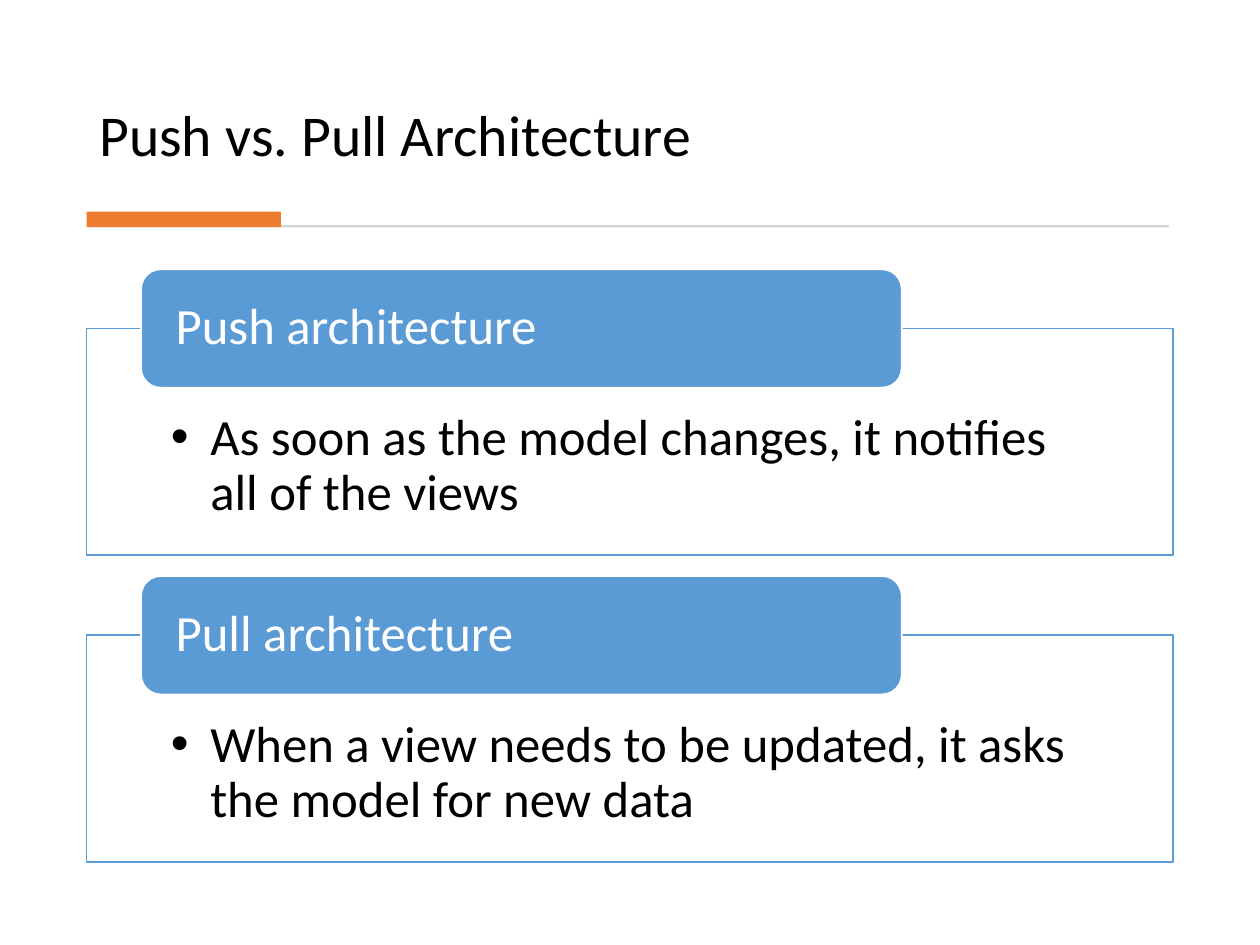
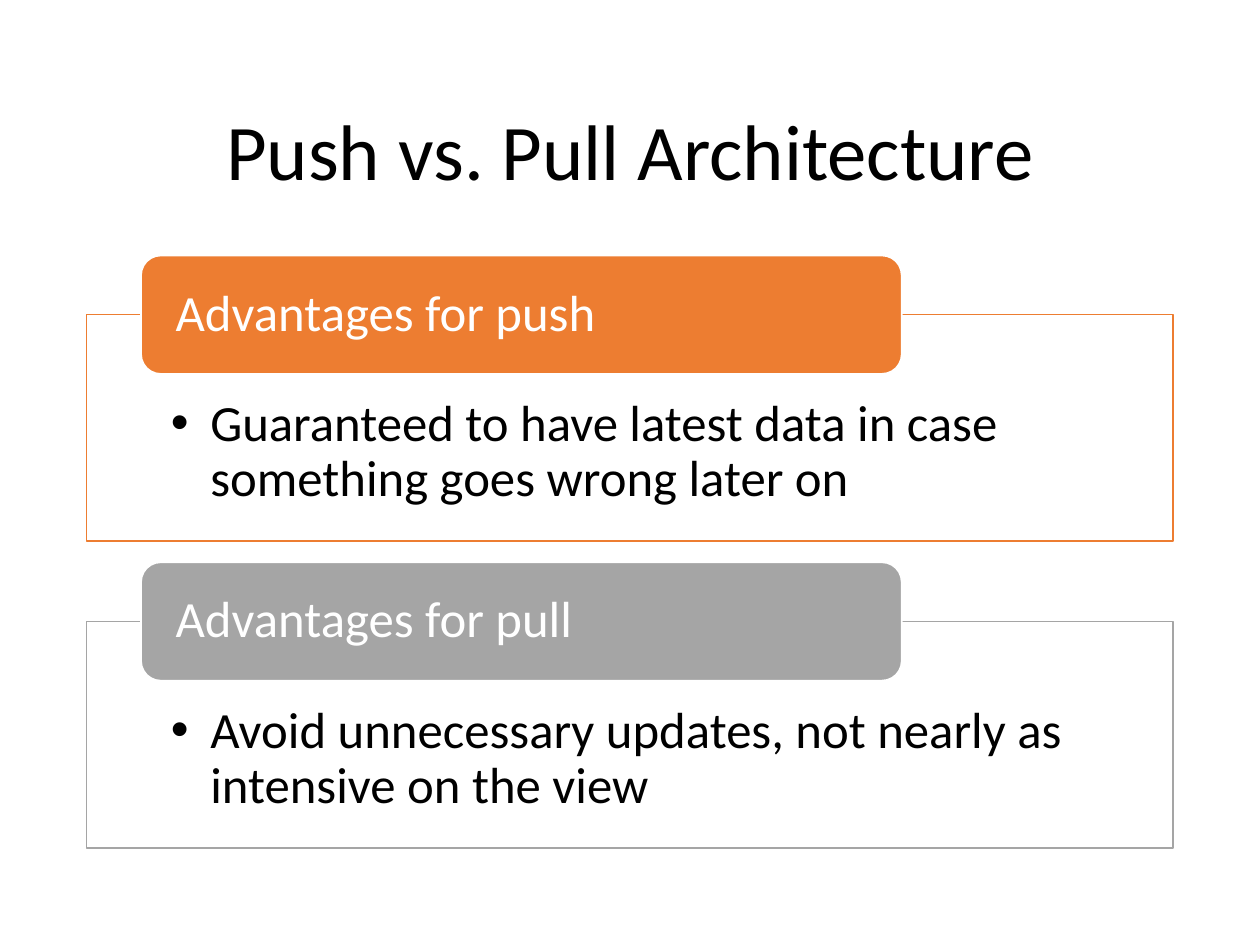
from dataclasses import dataclass
from typing import Optional

from lxml.etree import SubElement
from pptx import Presentation
from pptx.dml.color import RGBColor
from pptx.enum.shapes import MSO_SHAPE as Preset
from pptx.enum.text import MSO_ANCHOR as Anchor, MSO_AUTO_SIZE as AutoSize, PP_ALIGN as Align
from pptx.oxml.ns import qn
from pptx.util import Pt

# Shared style
FONT = "Calibri"
BLACK = RGBColor(0x00, 0x00, 0x00)
WHITE = RGBColor(0xFF, 0xFF, 0xFF)
BLUE = RGBColor(0x5B, 0x9B, 0xD5)
ORANGE = RGBColor(0xED, 0x7D, 0x31)
GRAY = RGBColor(0xA5, 0xA5, 0xA5)
RULE_GRAY = RGBColor(0xD5, 0xD5, 0xD5)

# Shared layout, in points
TITLE_ONLY = 5
LEFT, WIDTH = 49.5, 621
PANEL_HEIGHT, PANEL_STEP = 129.6, 175.3
TAB_LEFT, TAB_WIDTH, TAB_HEIGHT = 80.6, 434.7, 67.7
TAB_RISE = 33.8
TEXT_SIZE = 29
BULLET_INDENT = 22.5


@dataclass(frozen=True)
class Box:
    left: float
    top: float
    width: float
    height: float

    def lengths(self) -> tuple:
        return Pt(self.left), Pt(self.top), Pt(self.width), Pt(self.height)


@dataclass(frozen=True)
class TitleStyle:
    box: Box
    size: float
    anchor: Anchor
    align: Align


@dataclass(frozen=True)
class Panel:
    heading: str
    detail: str
    color: RGBColor


@dataclass(frozen=True)
class SlideContent:
    title_style: TitleStyle
    has_rule: bool
    panels_top: float
    panels: tuple[Panel, ...]


TITLE = "Push vs. Pull Architecture"
SLIDES = (
    SlideContent(
        TitleStyle(Box(LEFT, 20.2, WIDTH, 79.9), 33, Anchor.BOTTOM, Align.LEFT),
        True,
        187.7,
        (
            Panel("Push architecture",
                  "As soon as the model changes, it notifies all of the views", BLUE),
            Panel("Pull architecture",
                  "When a view needs to be updated, it asks the model for new data", BLUE),
        ),
    ),
    SlideContent(
        TitleStyle(Box(LEFT, 43.9, WIDTH, 89.3), 45, Anchor.MIDDLE, Align.CENTER),
        False,
        179.8,
        (
            Panel("Advantages for push",
                  "Guaranteed to have latest data in case something goes wrong later on",
                  ORANGE),
            Panel("Advantages for pull",
                  "Avoid unnecessary updates, not nearly as intensive on the view", GRAY),
        ),
    ),
)


def add_block(slide, preset: Preset, box: Box, fill: RGBColor,
              line: Optional[RGBColor] = None):
    shape = slide.shapes.add_shape(preset, *box.lengths())
    shape.shadow.inherit = False
    shape.fill.solid()
    shape.fill.fore_color.rgb = fill
    if line is None:
        shape.line.fill.background()
    else:
        shape.line.color.rgb = line
        shape.line.width = Pt(1)
    return shape


def write_text(shape, text: str, size: float, color: RGBColor,
               anchor: Anchor, align: Align = Align.LEFT):
    frame = shape.text_frame
    frame.word_wrap = True
    frame.auto_size = AutoSize.NONE
    frame.vertical_anchor = anchor
    paragraph = frame.paragraphs[0]
    paragraph.alignment = align
    paragraph.line_spacing = 0.9
    run = paragraph.add_run()
    run.text = text
    run.font.name = FONT
    run.font.size = Pt(size)
    run.font.color.rgb = color
    return paragraph


def set_insets(shape, side: float, top: float, bottom: float) -> None:
    frame = shape.text_frame
    frame.margin_left = frame.margin_right = Pt(side)
    frame.margin_top, frame.margin_bottom = Pt(top), Pt(bottom)


def add_bullet(paragraph) -> None:
    properties = paragraph._p.get_or_add_pPr()
    properties.set("marL", str(Pt(BULLET_INDENT)))
    properties.set("indent", str(-Pt(BULLET_INDENT)))
    SubElement(properties, qn("a:buFont"), typeface="Arial")
    SubElement(properties, qn("a:buChar"), char="•")


def set_opacity(shape, percent: int) -> None:
    color = shape._element.spPr.find(qn("a:solidFill"))[0]
    SubElement(color, qn("a:alpha"), val=str(percent * 1000))


def add_title(slide, style: TitleStyle) -> None:
    title = slide.shapes.title
    title.left, title.top, title.width, title.height = style.box.lengths()
    write_text(title, TITLE, style.size, BLACK, style.anchor, style.align)


def add_title_rule(slide) -> None:
    add_block(slide, Preset.RECTANGLE, Box(51, 128.6, 617, 1.4), RULE_GRAY)
    add_block(slide, Preset.RECTANGLE, Box(LEFT, 121, 111, 8.8), ORANGE)


def add_panel(slide, panel: Panel, top: float) -> None:
    # Outlined box with the bulleted detail
    body = add_block(slide, Preset.RECTANGLE, Box(LEFT, top, WIDTH, PANEL_HEIGHT),
                     WHITE, panel.color)
    set_opacity(body, 90)
    set_insets(body, 48.2, 47.5, 16.5)
    add_bullet(write_text(body, panel.detail, TEXT_SIZE, BLACK, Anchor.TOP))

    # Heading tab across the top edge
    tab = add_block(slide, Preset.ROUNDED_RECTANGLE,
                    Box(TAB_LEFT, top - TAB_RISE, TAB_WIDTH, TAB_HEIGHT),
                    panel.color, WHITE)
    set_insets(tab, 16.5, 0, 0)
    write_text(tab, panel.heading, TEXT_SIZE, WHITE, Anchor.MIDDLE)


def main() -> None:
    presentation = Presentation()
    presentation.slide_width, presentation.slide_height = Pt(720), Pt(540)
    for content in SLIDES:
        slide = presentation.slides.add_slide(presentation.slide_layouts[TITLE_ONLY])
        add_title(slide, content.title_style)
        if content.has_rule:
            add_title_rule(slide)
        for index, panel in enumerate(content.panels):
            add_panel(slide, panel, content.panels_top + index * PANEL_STEP)
    presentation.save("out.pptx")


if __name__ == "__main__":
    main()
